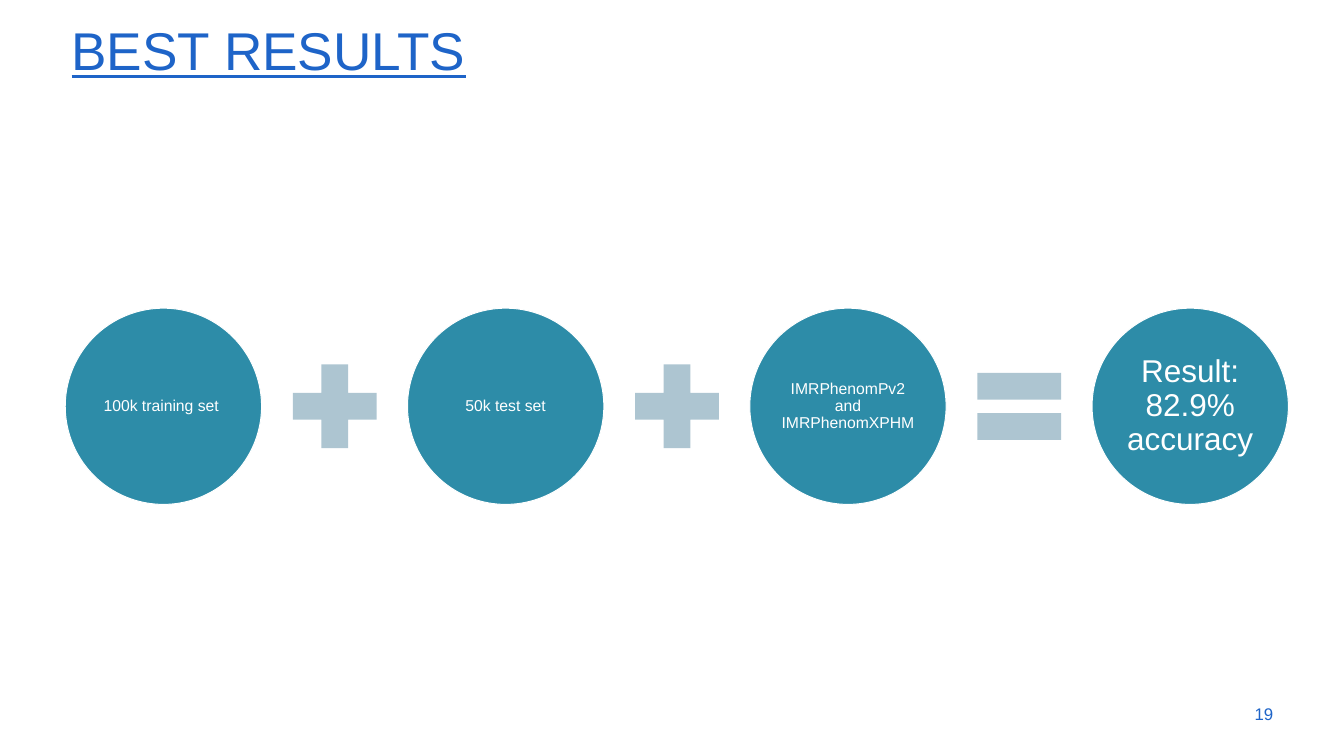
from dataclasses import dataclass
from pptx import Presentation
from pptx.dml.color import RGBColor
from pptx.enum.shapes import MSO_SHAPE
from pptx.enum.text import MSO_ANCHOR, PP_ALIGN
from pptx.util import Pt


@dataclass(frozen=True)
class Theme:
    font: str = "Arial"
    blue: RGBColor = RGBColor(0x1E, 0x64, 0xC8)
    teal: RGBColor = RGBColor(0x2D, 0x8C, 0xA8)
    grey: RGBColor = RGBColor(0xAD, 0xC5, 0xD1)
    white: RGBColor = RGBColor(0xFF, 0xFF, 0xFF)
    title: float = 54
    result: float = 32
    label: float = 16
    number: float = 17.1


theme = Theme()


def write(frame, text, size, color, align, spacing=0.9):
    """Add one run of text, centred vertically in its frame."""
    frame.word_wrap = True
    frame.vertical_anchor = MSO_ANCHOR.MIDDLE
    para = frame.paragraphs[0]
    para.alignment = align
    para.line_spacing = spacing
    run = para.add_run()
    run.text = text
    run.font.name = theme.font
    run.font.size = Pt(size)
    run.font.color.rgb = color
    return run


def draw(kind, left, size, fill):
    """Add a square shape centred on the row."""
    shape = slide.shapes.add_shape(
        kind, Pt(left), Pt(middle - size / 2), Pt(size), Pt(size))
    shape.shadow.inherit = False
    shape.fill.solid()
    shape.fill.fore_color.rgb = fill
    shape.line.fill.background()
    return shape


# Slide
deck = Presentation()
deck.slide_width, deck.slide_height = Pt(1365.12), Pt(768.24)
slide = deck.slides.add_slide(deck.slide_layouts[5])

# Title
title = slide.shapes.title
title.left, title.top = Pt(65.5), Pt(20.2)
title.width, title.height = Pt(1237), Pt(67.7)
run = write(title.text_frame, "BEST RESULTS", theme.title, theme.blue,
            PP_ALIGN.LEFT)
run.font.underline = True

# Row of circles, each followed by its sign
start, middle, step = 66.3, 412.9, 347.65
round_size, sign_size, sign_shift = 199.4, 115.8, 215.75
steps = [
    ("100k training set ", theme.label, 1.4, MSO_SHAPE.MATH_PLUS),
    ("50k test set", theme.label, 1.4, MSO_SHAPE.MATH_PLUS),
    ("IMRPhenomPv2 and IMRPhenomXPHM", theme.label, 1.4, MSO_SHAPE.MATH_EQUAL),
    ("Result: 82.9% accuracy", theme.result, 2.9, None),
]
for i, (text, size, inset, sign) in enumerate(steps):
    left = start + i * step
    circle = draw(MSO_SHAPE.OVAL, left, round_size, theme.teal)
    circle.line.color.rgb = theme.white
    circle.line.width = Pt(1)
    frame = circle.text_frame
    frame.margin_left = frame.margin_right = Pt(inset)
    frame.margin_top = frame.margin_bottom = Pt(inset)
    write(frame, text, size, theme.white, PP_ALIGN.CENTER)
    if sign:
        draw(sign, left + sign_shift, sign_size, theme.grey)

# Slide number
number = slide.shapes.add_textbox(Pt(1227.6), Pt(704.9), Pt(72.7), Pt(41))
write(number.text_frame, "19", theme.number, theme.blue, PP_ALIGN.RIGHT, 1.0)

deck.save("out.pptx")
